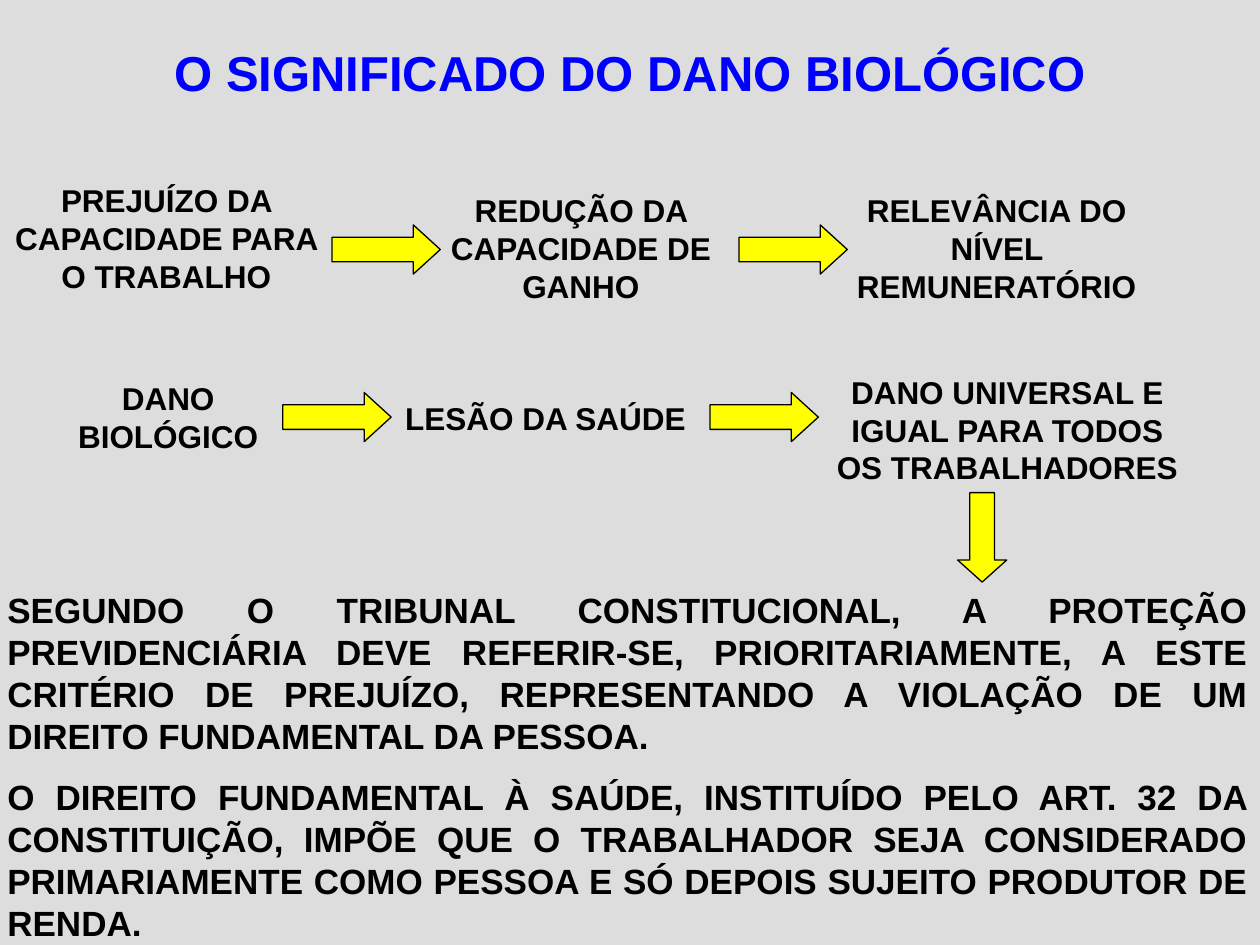
"""Build the slide on the meaning of biological damage."""
from dataclasses import dataclass

from pptx import Presentation, util as u
from pptx.dml.color import RGBColor
from pptx.enum import shapes, text

COLS, ROWS = 100, 75
WIDE, HIGH = u.Inches(10), u.Inches(7.5)
INK, BLUE, GOLD, GREY = "000000", "0000FF", "FFFF00", "DDDDDD"
MID, FULL = text.PP_ALIGN.CENTER, text.PP_ALIGN.JUSTIFY


@dataclass(frozen=True)
class Box:
    """A place on the grid, in columns and rows."""
    col: float
    row: float
    wide: float
    high: float

    def frame(self) -> dict[str, int]:
        """Return the place as shape lengths."""
        return {
            "left": round(self.col * WIDE / COLS),
            "top": round(self.row * HIGH / ROWS),
            "width": round(self.wide * WIDE / COLS),
            "height": round(self.high * HIGH / ROWS),
        }


@dataclass(frozen=True)
class Note:
    """A block of bold text."""
    box: Box
    lines: tuple[str, ...]
    size: int = 18
    align: text.PP_ALIGN = MID


@dataclass(frozen=True)
class Arrow:
    """A block arrow with its turn and head share."""
    box: Box
    turn: int = 270
    head: float = 0.548


def tint(code: str) -> RGBColor:
    """Turn a hex string into a colour."""
    return RGBColor.from_string(code)


def apply(item: object, vals: dict) -> None:
    """Set each attribute named in a dict."""
    for key, val in vals.items():
        setattr(item, key, val)


def write(frame, lines: tuple[str, ...], size: int, hue: str, align: text.PP_ALIGN, gap: float) -> None:
    """Fill a text frame with formatted paragraphs."""
    for num, line in enumerate(lines):
        para = frame.add_paragraph() if num else frame.paragraphs[0]
        apply(para, {"alignment": align, "space_before": u.Pt(gap if num else 0)})
        run = para.add_run()
        run.text = line
        apply(run.font, {"name": "Arial", "size": u.Pt(size), "bold": True})
        run.font.color.rgb = tint(hue)


def head(slide, box: Box, line: str) -> None:
    """Place and format the title."""
    title = slide.shapes.title
    apply(title, box.frame())
    apply(title.text_frame, {
        "word_wrap": True,
        "auto_size": text.MSO_AUTO_SIZE.NONE,
        "vertical_anchor": text.MSO_ANCHOR.MIDDLE,
    })
    write(title.text_frame, (line,), 28, BLUE, MID, 0)


def draw_note(slide, note: Note) -> None:
    """Draw one block of text."""
    frame = slide.shapes.add_textbox(**note.box.frame()).text_frame
    apply(frame, {"word_wrap": True, "auto_size": text.MSO_AUTO_SIZE.SHAPE_TO_FIT_TEXT})
    write(frame, note.lines, note.size, INK, note.align, 11)


def draw_arrow(slide, arrow: Arrow) -> None:
    """Draw one block arrow."""
    shape = slide.shapes.add_shape(shapes.MSO_SHAPE.DOWN_ARROW, **arrow.box.frame())
    shape.rotation = arrow.turn
    shape.adjustments[1] = arrow.head
    shape.shadow.inherit = False
    shape.fill.solid()
    shape.fill.fore_color.rgb = tint(GOLD)
    shape.line.color.rgb = tint(INK)
    shape.line.width = u.Pt(0.75)


NOTES = (
    Note(Box(0, 13.9, 26.4, 10.1), ("PREJUÍZO DA CAPACIDADE PARA O TRABALHO",)),
    Note(Box(33.5, 14.7, 25.2, 10.1), ("REDUÇÃO DA CAPACIDADE DE GANHO",)),
    Note(Box(66.5, 14.7, 25.2, 10.1), ("RELEVÂNCIA DO NÍVEL REMUNERATÓRIO",)),
    Note(Box(5.1, 29.6, 16.5, 7.1), ("DANO BIOLÓGICO",)),
    Note(Box(31.1, 31.2, 24.4, 4), ("LESÃO DA SAÚDE",)),
    Note(Box(65, 29.1, 29.9, 10.1), ("DANO UNIVERSAL E IGUAL PARA TODOS OS TRABALHADORES",)),
    Note(Box(-0.4, 46.2, 100.4, 29.3), (
        "SEGUNDO O TRIBUNAL CONSTITUCIONAL, A PROTEÇÃO PREVIDENCIÁRIA DEVE "
        "REFERIR-SE, PRIORITARIAMENTE, A ESTE CRITÉRIO DE PREJUÍZO, "
        "REPRESENTANDO A VIOLAÇÃO DE UM DIREITO FUNDAMENTAL DA PESSOA.",
        "O DIREITO FUNDAMENTAL À SAÚDE, INSTITUÍDO PELO ART. 32 DA CONSTITUIÇÃO, "
        "IMPÕE QUE O TRABALHADOR SEJA CONSIDERADO PRIMARIAMENTE COMO PESSOA "
        "E SÓ DEPOIS SUJEITO PRODUTOR DE RENDA.",
    ), 20, FULL),
)
FLOWS = {15.5: (28.7, 61), 28.8: (24.8, 58.7)}
ARROWS = [Arrow(Box(col, row, 3.9, 8.6)) for row, cols in FLOWS.items() for col in cols]
ARROWS.append(Arrow(Box(76, 39.1, 3.9, 7.1), 0, 0.449))


def main() -> None:
    """Build and save the slide."""
    deck = Presentation()
    apply(deck, {"slide_width": WIDE, "slide_height": HIGH})
    slide = deck.slides.add_slide(deck.slide_layouts.get_by_name("Title Only"))
    fill = slide.background.fill
    fill.solid()
    fill.fore_color.rgb = tint(GREY)
    head(slide, Box(5, 3, 90, 5.4), "O SIGNIFICADO DO DANO BIOLÓGICO")
    for note in NOTES:
        draw_note(slide, note)
    for arrow in ARROWS:
        draw_arrow(slide, arrow)
    deck.save("out.pptx")


if __name__ == "__main__":
    main()
